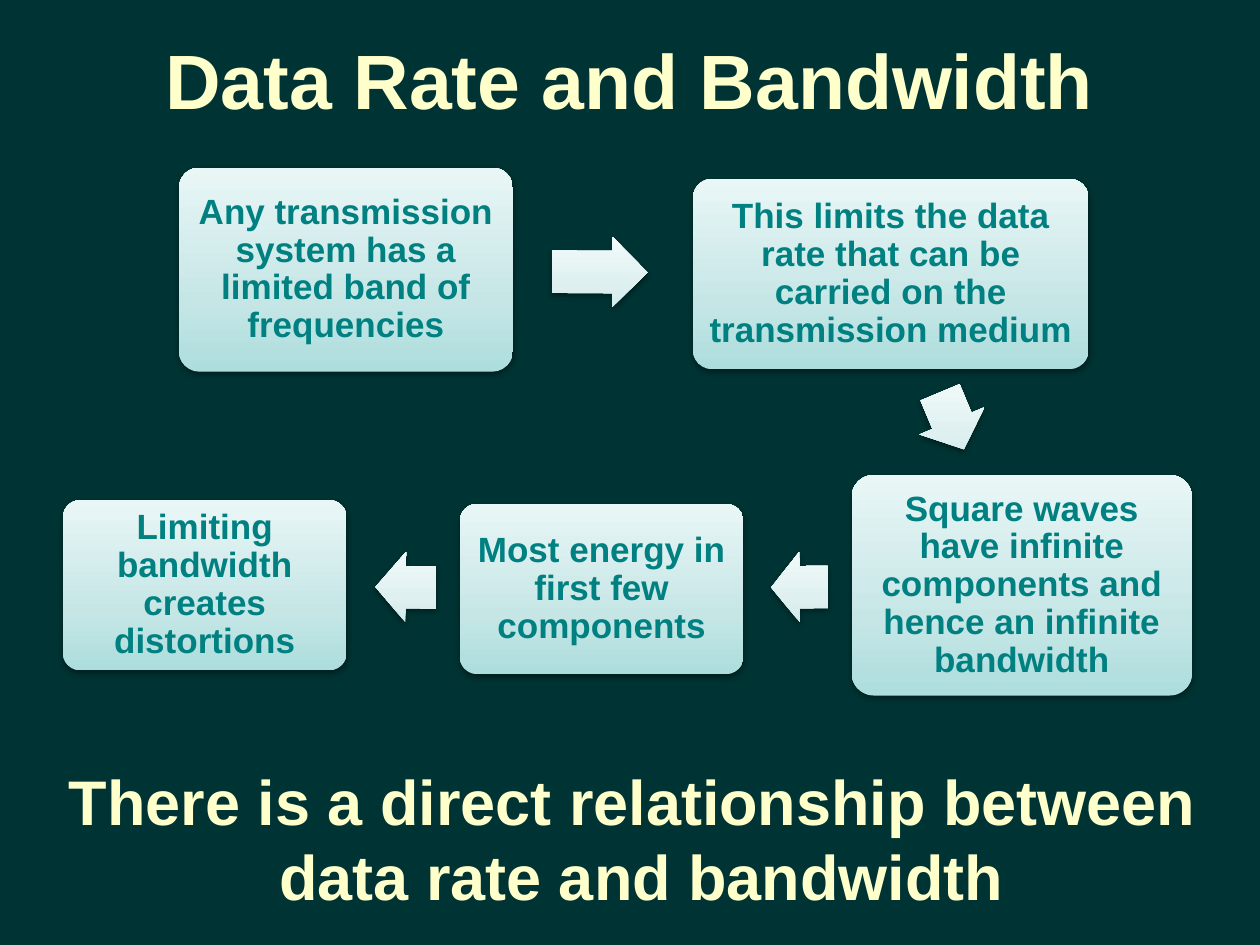
from lxml import etree
from pptx import Presentation
from pptx.dml.color import RGBColor
from pptx.enum.shapes import MSO_SHAPE
from pptx.enum.text import MSO_ANCHOR, PP_ALIGN
from pptx.oxml.ns import qn
from pptx.util import Pt

PX = 9144
ROUND_RECT, ARROW = MSO_SHAPE.ROUNDED_RECTANGLE, MSO_SHAPE.RIGHT_ARROW
CENTER, MIDDLE = PP_ALIGN.CENTER, MSO_ANCHOR.MIDDLE
FONT = "Arial"
COLORS = {"back": "003333", "heading": "FFFFCC", "step": "008080", "shadow": "000000"}
STEP_GRADIENT = [(0, "ADDDDD"), (35, "C6E6E6"), (100, "E9F6F6")]
ARROW_GRADIENT = [(0, "D2EBEB"), (35, "DFF0F0"), (100, "F2FAFA")]

STEPS = [
    ((142, 133, 265, 162), "Any transmission system has a limited band of frequencies"),
    ((550, 142, 314, 151), "This limits the data rate that can be carried on the transmission medium"),
    ((676, 377, 270, 175), "Square waves have infinite components and hence an infinite bandwidth"),
    ((365, 400, 225, 135), "Most energy in first few components"),
    ((50, 397, 225, 135), "Limiting bandwidth creates distortions"),
]
ARROWS = [
    ((438, 188, 76, 56), 0.4),
    ((731, 306, 49, 56), 67.3),
    ((612, 438, 45, 56), 179.5),
    ((298, 438, 48, 56), 180.5),
]


def emu(box):
    return [v * PX for v in box]


def add_text(p, text, size, color):
    p.alignment = CENTER
    r = p.add_run()
    r.text = text
    r.font.name, r.font.size, r.font.bold = FONT, Pt(size), True
    r.font.color.rgb = RGBColor.from_string(COLORS[color])


def add_color(parent, tag, value, **attrs):
    el = etree.SubElement(parent, qn(tag), attrs)
    return etree.SubElement(el, qn("a:srgbClr"), val=value)


def set_gradient(sp, stops):
    sp.fill.gradient()
    sp.fill.gradient_angle = 90
    grad = sp.element.spPr.find(qn("a:gradFill"))
    grad.set("rotWithShape", "0")
    stop_list = grad.find(qn("a:gsLst"))
    for stop in list(stop_list):
        stop_list.remove(stop)
    for pos, value in stops:
        add_color(stop_list, "a:gs", value, pos=str(pos * 1000))


def set_shadow(sp):
    sp.shadow.inherit = False
    effects = sp.element.spPr.find(qn("a:effectLst"))
    color = add_color(effects, "a:outerShdw", COLORS["shadow"], blurRad="40000",
                      dist="20000", dir="5400000", rotWithShape="0")
    etree.SubElement(color, qn("a:alpha"), val="38000")


def add_block(s, kind, box, stops, adjustments):
    sp = s.shapes.add_shape(kind, *emu(box))
    for i, value in enumerate(adjustments):
        sp.adjustments[i] = value
    set_gradient(sp, stops)
    sp.line.fill.background()
    set_shadow(sp)
    return sp


def add_step(s, box, text):
    sp = add_block(s, ROUND_RECT, box, STEP_GRADIENT, [0.1])
    tf = sp.text_frame
    tf.word_wrap, tf.vertical_anchor = True, MIDDLE
    tf.margin_left = tf.margin_right = tf.margin_top = tf.margin_bottom = 8 * PX
    p = tf.paragraphs[0]
    p.line_spacing = 0.9
    add_text(p, text, 20, "step")


def add_arrow(s, box, angle):
    sp = add_block(s, ARROW, box, ARROW_GRADIENT, [0.6, 0.5])
    sp.rotation = angle


def add_title(s, box, text):
    title = s.shapes.title
    title.left, title.top, title.width, title.height = emu(box)
    title.text_frame.vertical_anchor = MIDDLE
    add_text(title.text_frame.paragraphs[0], text, 44, "heading")


def add_flow(s):
    for box, text in STEPS:
        add_step(s, box, text)
    for box, angle in ARROWS:
        add_arrow(s, box, angle)


def add_conclusion(s, box, lines):
    tf = s.shapes.add_textbox(*emu(box)).text_frame
    tf.word_wrap = True
    for i, line in enumerate(lines):
        p = tf.add_paragraph() if i else tf.paragraphs[0]
        add_text(p, line, 36, "heading")


def main():
    prs = Presentation()
    prs.slide_width, prs.slide_height = emu((1000, 750))
    s = prs.slides.add_slide(prs.slide_layouts[5])
    s.background.fill.solid()
    s.background.fill.fore_color.rgb = RGBColor.from_string(COLORS["back"])
    add_title(s, (50, 0, 900, 125), "Data Rate and Bandwidth")
    add_flow(s)
    add_conclusion(s, (20, 600, 978, 131),
                   ["There is a direct relationship between ", "data rate and bandwidth"])
    prs.save("out.pptx")


if __name__ == "__main__":
    main()
